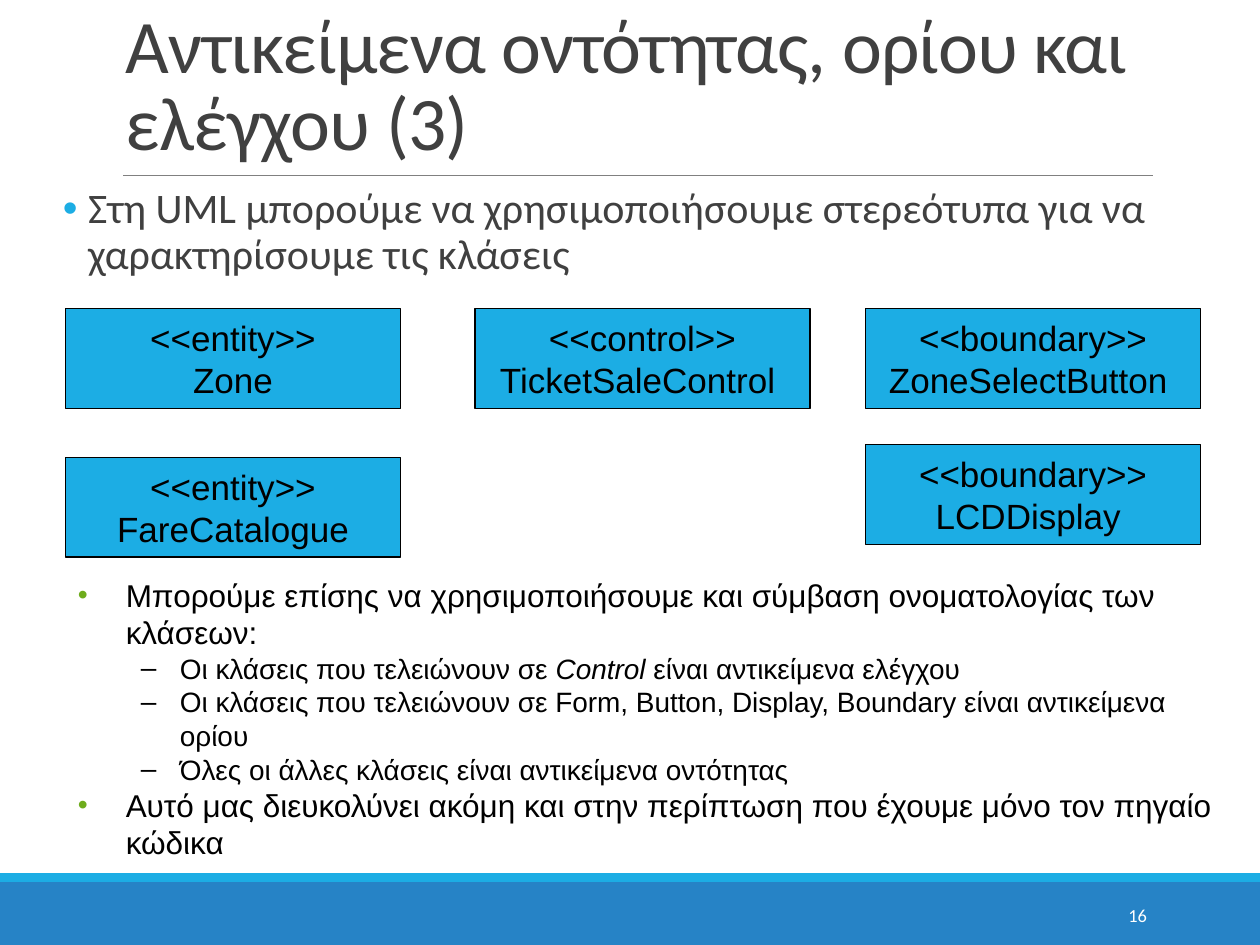
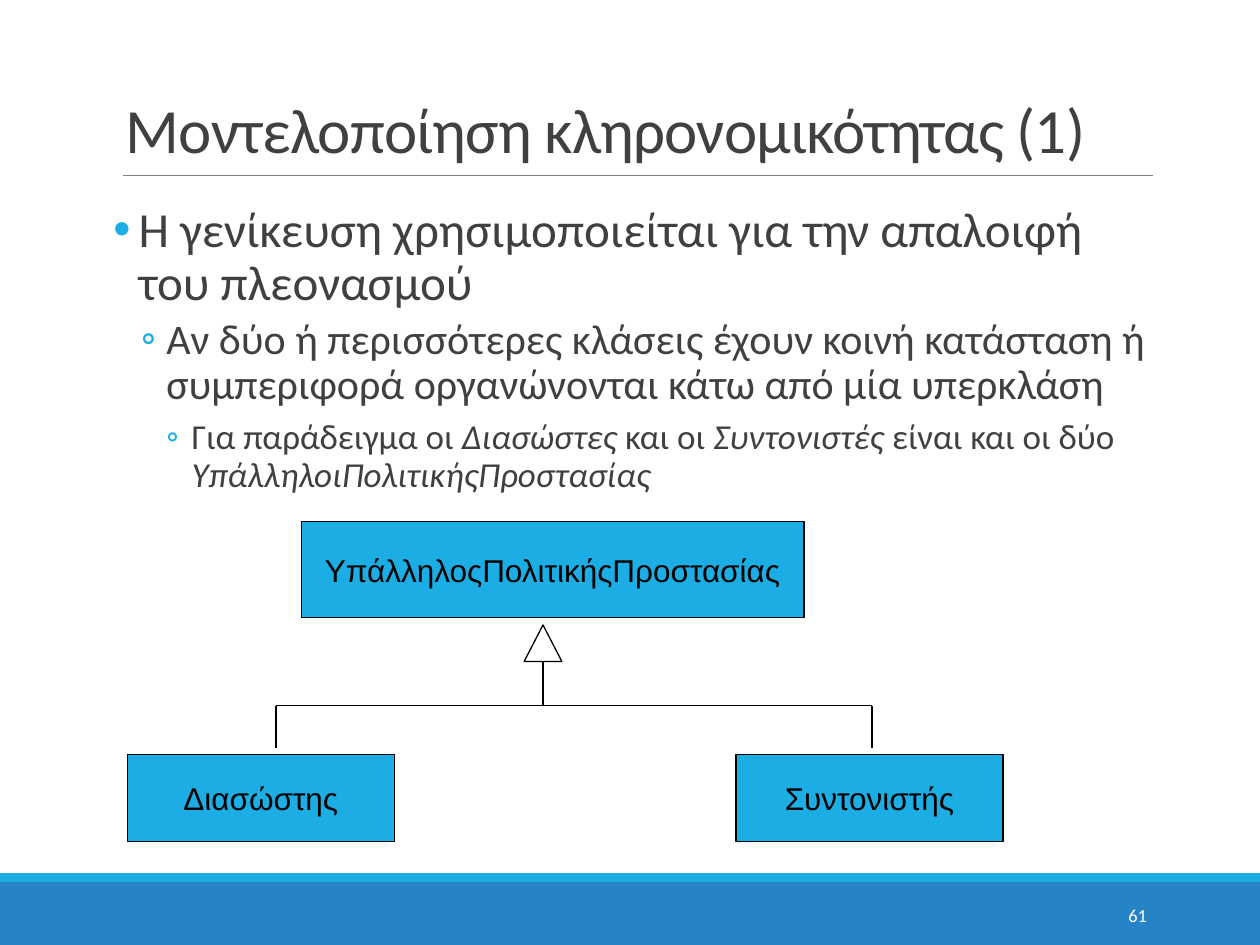
from collections import namedtuple

from lxml import etree
from pptx import Presentation
from pptx import util as u
from pptx.dml import color
from pptx.enum import shapes, text
from pptx.oxml import ns

COLORS = {"band": "2683C6", "accent": "1CADE4", "rule": "808080", "body": "404040",
          "black": "000000", "white": "FFFFFF", "green": "6EAC1C"}
Bullet = namedtuple("Bullet", "level left hang char color pct before after spacing")
BODY = [Bullet(0, 0.2, 0.2, "•", "accent", 100, 12, 2, 0.9),
        Bullet(1, 0.42, 0.2, "◦", "accent", 100, 2, 4, 0.9),
        Bullet(2, 0.62, 0.2, "◦", "accent", 100, 2, 4, 0.9)]
NOTES = [Bullet(0, 0.38, 0.38, "•", "green", 90, 0, 0, 1),
         Bullet(1, 0.81, 0.31, "–", "black", 100, 0, 0, 1)]


def rgb(name):
    return color.RGBColor.from_string(COLORS[name])


def inches(*values):
    return [u.Inches(v) for v in values]


class Deck:
    def __init__(self):
        self.prs = Presentation()
        self.prs.slide_width, self.prs.slide_height = inches(10, 7.5)
        self.s = None

    def slide(self, title, size, number):
        self.s = self.prs.slides.add_slide(self.prs.slide_layouts[6])
        self.shape((0, 7, 10, 0.5), "band")
        self.shape((0, 6.93, 10, 0.07), "accent")
        self.line((0.98, 1.39), (9.15, 1.39), "rule", 0.5)
        tf = self.textbox((0.9, 0.11, 8.25, 1.26), text.MSO_ANCHOR.BOTTOM)
        tf.text = title
        self.style(tf, size, "Calibri", "body")
        tf.paragraphs[0].line_spacing = 0.85
        for r in tf.paragraphs[0].runs:
            r.font._element.set("spc", "-50")
        tf = self.textbox((8.12, 7.06, 1.08, 0.4), text.MSO_ANCHOR.MIDDLE)
        tf.text = number
        self.style(tf, 10.5, "Calibri", "white", text.PP_ALIGN.RIGHT)

    def style(self, tf, size, font, ink, align=None):
        for p in tf.paragraphs:
            p.alignment = align
            for r in p.runs:
                self.format_run(r, size, font, ink)

    def format_run(self, r, size, font, ink):
        r.font.size = u.Pt(size)
        r.font.name = font
        r.font.color.rgb = rgb(ink)

    def textbox(self, at, anchor=text.MSO_ANCHOR.TOP):
        tf = self.s.shapes.add_textbox(*inches(*at)).text_frame
        tf.word_wrap = True
        tf.vertical_anchor = anchor
        return tf

    def shape(self, at, fill=None, line=None, kind=shapes.MSO_SHAPE.RECTANGLE):
        sp = self.s.shapes.add_shape(kind, *inches(*at))
        sp.shadow.inherit = False
        if fill:
            sp.fill.solid()
            sp.fill.fore_color.rgb = rgb(fill)
        else:
            sp.fill.background()
        if line:
            sp.line.color.rgb = rgb(line)
            sp.line.width = u.Pt(0.75)
        else:
            sp.line.fill.background()
        return sp

    def class_box(self, at, label, size):
        tf = self.shape(at, "accent", "black").text_frame
        tf.word_wrap = False
        tf.vertical_anchor = text.MSO_ANCHOR.MIDDLE
        tf.text = label
        self.style(tf, size, "Arial", "black", text.PP_ALIGN.CENTER)

    def line(self, start, end, ink="black", width=0.75):
        c = self.s.shapes.add_connector(shapes.MSO_CONNECTOR.STRAIGHT, *inches(*start, *end))
        c.line.color.rgb = rgb(ink)
        c.line.width = u.Pt(width)
        etree.SubElement(c._element.spPr, ns.qn("a:effectLst"))

    def bullets(self, at, items, levels, font, ink, side=0.1):
        tf = self.textbox(at)
        tf.margin_left = tf.margin_right = u.Inches(side)
        for i, (level, size, words) in enumerate(items):
            p = tf.add_paragraph() if i else tf.paragraphs[0]
            self.bullet(p, levels[level])
            if i:
                p.space_before = u.Pt(levels[level].before)
            for j, part in enumerate(words.split("*")):
                if part:
                    r = p.add_run()
                    r.text = part
                    self.format_run(r, size, font, ink)
                    r.font.italic = j % 2 == 1

    def bullet(self, p, b):
        p.level = b.level
        pPr = p._p.get_or_add_pPr()
        pPr.set("marL", str(u.Inches(b.left)))
        pPr.set("indent", str(-u.Inches(b.hang)))
        clr = etree.SubElement(pPr, ns.qn("a:buClr"))
        etree.SubElement(clr, ns.qn("a:srgbClr"), val=COLORS[b.color])
        etree.SubElement(pPr, ns.qn("a:buSzPct"), val=str(b.pct * 1000))
        etree.SubElement(pPr, ns.qn("a:buFont"), typeface="Arial" if b.char != "◦" else "Calibri")
        etree.SubElement(pPr, ns.qn("a:buChar"), char=b.char)
        p.line_spacing = b.spacing
        p.space_after = u.Pt(b.after)


def stereotypes(deck):
    deck.slide("Αντικείμενα οντότητας, ορίου και ελέγχου (3)", 43.2, "16")
    deck.bullets((0.5, 1.44, 9, 1.02), [
        (0, 24, "Στη UML μπορούμε να χρησιμοποιήσουμε στερεότυπα για να χαρακτηρίσουμε τις κλάσεις"),
    ], BODY, "Calibri", "body", side=0)
    for left, top, kind, name in [
        (0.52, 2.45, "entity", "Zone"),
        (0.52, 3.63, "entity", "FareCatalogue"),
        (3.77, 2.45, "control", "TicketSaleControl "),
        (6.87, 2.45, "boundary", "ZoneSelectButton "),
        (6.87, 3.53, "boundary", "LCDDisplay "),
    ]:
        deck.class_box((left, top, 2.66, 0.79), f"<<{kind}>>\n{name}", 20)
    deck.bullets((0.52, 4.52, 9.2, 2.67), [
        (0, 18, "Μπορούμε επίσης να χρησιμοποιήσουμε και σύμβαση ονοματολογίας των κλάσεων:"),
        (1, 16, "Οι κλάσεις που τελειώνουν σε *Control *είναι αντικείμενα ελέγχου"),
        (1, 16, "Οι κλάσεις που τελειώνουν σε Form, Button, Display, Boundary είναι αντικείμενα ορίου"),
        (1, 16, "Όλες οι άλλες κλάσεις είναι αντικείμενα οντότητας"),
        (0, 18, "Αυτό μας διευκολύνει ακόμη και στην περίπτωση που έχουμε μόνο τον πηγαίο κώδικα"),
    ], NOTES, "Arial", "black")


def inheritance(deck):
    deck.slide("Μοντελοποίηση κληρονομικότητας (1)", 36, "61")
    deck.bullets((0.9, 1.58, 8.25, 5.27), [
        (0, 28, "Η γενίκευση χρησιμοποιείται για την απαλοιφή του πλεονασμού"),
        (1, 24, "Αν δύο ή περισσότερες κλάσεις έχουν κοινή κατάσταση ή συμπεριφορά "
                "οργανώνονται κάτω από μία υπερκλάση"),
        (2, 20, "Για παράδειγμα οι *Διασώστες *και οι *Συντονιστές* είναι και οι δύο "
                "*ΥπάλληλοιΠολιτικήςΠροστασίας*"),
    ], BODY, "Calibri", "body", side=0)
    deck.class_box((2.39, 4.14, 3.99, 0.76), "ΥπάλληλοςΠολιτικήςΠροστασίας", 18)
    for left, name in [(1.01, "Διασώστης"), (5.84, "Συντονιστής")]:
        deck.class_box((left, 5.99, 2.12, 0.69), name, 18)
    trunk, branches, fork = 4.31, (2.19, 6.92), 5.6
    deck.shape((trunk - 0.15, 4.96, 0.3, 0.29), line="black",
               kind=shapes.MSO_SHAPE.ISOSCELES_TRIANGLE)
    deck.line((trunk, 5.25), (trunk, fork))
    deck.line((branches[0], fork), (branches[1], fork))
    for x in branches:
        deck.line((x, fork), (x, 5.94))


def main():
    deck = Deck()
    stereotypes(deck)
    inheritance(deck)
    deck.prs.save("out.pptx")


if __name__ == "__main__":
    main()
